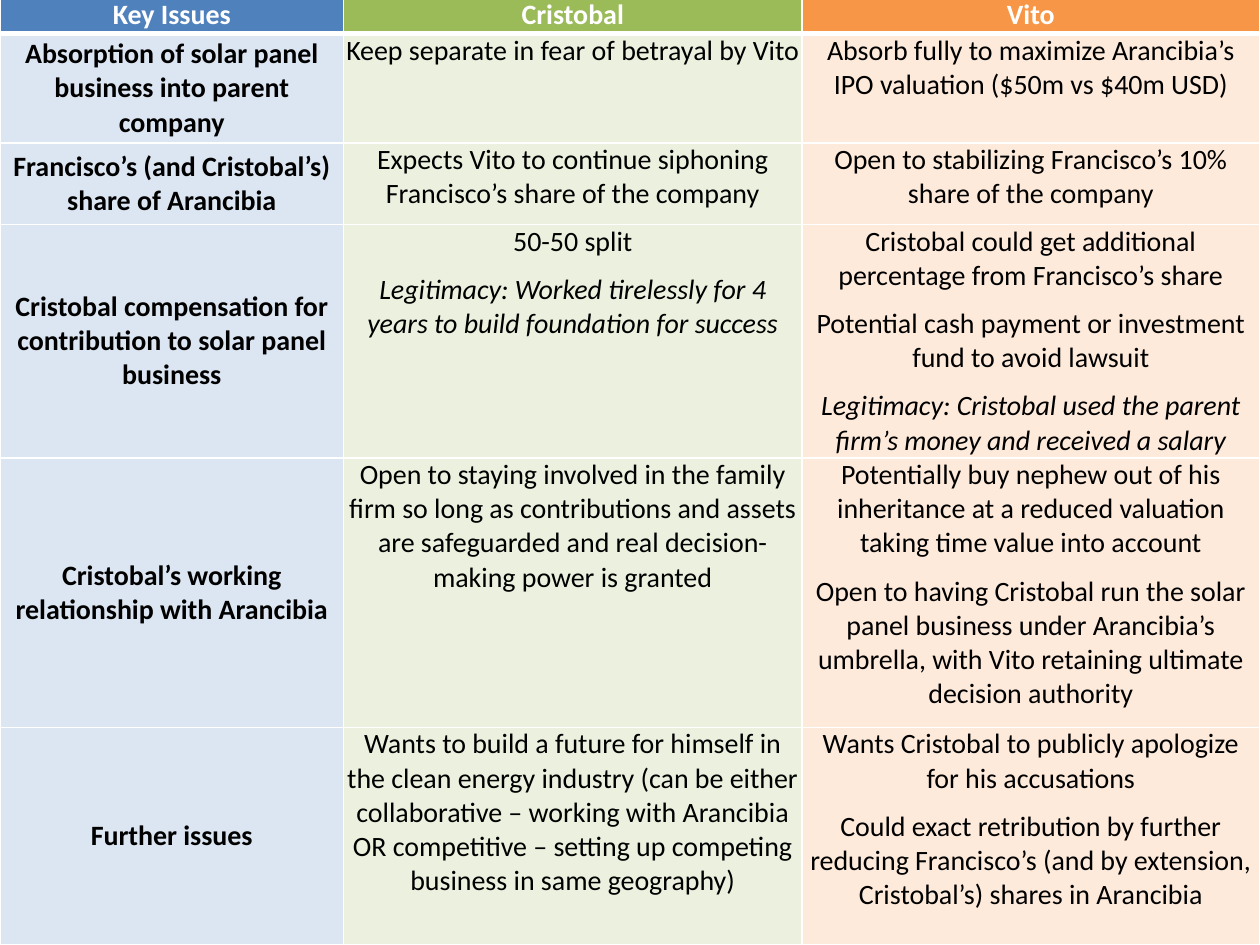
from lxml.etree import SubElement
from pptx import Presentation
from pptx.dml.color import RGBColor
from pptx.enum.text import MSO_ANCHOR, PP_ALIGN
from pptx.oxml.ns import qn
from pptx.util import Pt

# Content: one list of paragraphs per cell
HEADINGS = ["Key Issues", "Cristobal", "Vito"]
ISSUES = [
    (["Absorption of solar panel business into parent company"],
     ["Keep separate in fear of betrayal by Vito"],
     ["Absorb fully to maximize Arancibia’s IPO valuation ($50m vs $40m USD)"]),
    (["Francisco’s (and Cristobal’s) share of Arancibia"],
     ["Expects Vito to continue siphoning Francisco’s share of the company"],
     ["Open to stabilizing Francisco’s 10% share of the company"]),
    (["Cristobal compensation for contribution to solar panel business"],
     ["50-50 split",
      "Legitimacy: Worked tirelessly for 4 years to build foundation for success"],
     ["Cristobal could get additional percentage from Francisco’s share",
      "Potential cash payment or investment fund to avoid lawsuit",
      "Legitimacy: Cristobal used the parent firm’s money and received a salary"]),
    (["Cristobal’s working relationship with Arancibia"],
     ["Open to staying involved in the family firm so long as contributions and assets "
      "are safeguarded and real decision-making power is granted"],
     ["Potentially buy nephew out of his inheritance at a reduced valuation "
      "taking time value into account",
      "Open to having Cristobal run the solar panel business under Arancibia’s umbrella, "
      "with Vito retaining ultimate decision authority"]),
    (["Further issues"],
     ["Wants to build a future for himself in the clean energy industry (can be either "
      "collaborative – working with Arancibia OR competitive – setting up competing "
      "business in same geography)"],
     ["Wants Cristobal to publicly apologize for his accusations",
      "Could exact retribution by further reducing Francisco’s (and by extension, "
      "Cristobal’s) shares in Arancibia"]),
]

# Look
WHITE = RGBColor(0xFF, 0xFF, 0xFF)
BLACK = RGBColor(0x00, 0x00, 0x00)
HEADING_FILLS = [RGBColor(0x4F, 0x81, 0xBD), RGBColor(0x9B, 0xBB, 0x59),
                 RGBColor(0xF7, 0x96, 0x46)]
BODY_FILLS = [RGBColor(0xDC, 0xE6, 0xF2), RGBColor(0xEB, 0xF1, 0xDE),
              RGBColor(0xFD, 0xEA, 0xDA)]
COLUMN_WIDTHS = [196.4, 261.8, 261.8]
ROW_HEIGHTS = [20.8, 62.4, 46.6, 133.3, 154, 124.4]
TABLE_TOP = -1.5
SIDE_MARGIN = 1.4
THIN, THICK = 1, 3


def add_borders(cell, top, bottom):
    properties = cell._tc.get_or_add_tcPr()
    for side, width in (("L", THIN), ("R", THIN), ("T", top), ("B", bottom)):
        line = SubElement(properties, qn(f"a:ln{side}"), w=str(Pt(width)))
        fill = SubElement(line, qn("a:solidFill"))
        SubElement(fill, qn("a:srgbClr"), val=str(WHITE))


def fill_cell(cell, texts, fill_color, text_color, bold):
    cell.fill.solid()
    cell.fill.fore_color.rgb = fill_color
    cell.margin_left = cell.margin_right = Pt(SIDE_MARGIN)
    cell.margin_top = cell.margin_bottom = 0
    frame = cell.text_frame
    frame.text = "\n".join(texts)
    for para in frame.paragraphs:
        para.alignment = PP_ALIGN.CENTER
        para.space_after = Pt(8)
        font = para.font
        font.name = "Calibri"
        font.size = Pt(16)
        font.bold = bold
        font.italic = para.text.startswith("Legitimacy:")
        font.color.rgb = text_color


def main():
    deck = Presentation()
    deck.slide_width, deck.slide_height = Pt(720), Pt(540)
    page = deck.slides.add_slide(deck.slide_layouts[6])

    # Table grid
    rows = [[[heading] for heading in HEADINGS], *ISSUES]
    table = page.shapes.add_table(
        len(rows), len(HEADINGS), 0, Pt(TABLE_TOP),
        Pt(sum(COLUMN_WIDTHS)), Pt(sum(ROW_HEIGHTS))).table
    table.first_row = table.horz_banding = False
    for column, width in zip(table.columns, COLUMN_WIDTHS):
        column.width = Pt(width)
    for row, height in zip(table.rows, ROW_HEIGHTS):
        row.height = Pt(height)

    # Cells: coloured heading row, bold issue names in the first column
    for r, row in enumerate(rows):
        is_heading = r == 0
        fills = HEADING_FILLS if is_heading else BODY_FILLS
        for c, texts in enumerate(row):
            cell = table.cell(r, c)
            add_borders(cell, THICK if r == 1 else THIN, THICK if is_heading else THIN)
            fill_cell(cell, texts, fills[c], WHITE if is_heading else BLACK,
                      is_heading or c == 0)
            if c == 0 and not is_heading:
                cell.vertical_anchor = MSO_ANCHOR.MIDDLE

    deck.save("out.pptx")


if __name__ == "__main__":
    main()
